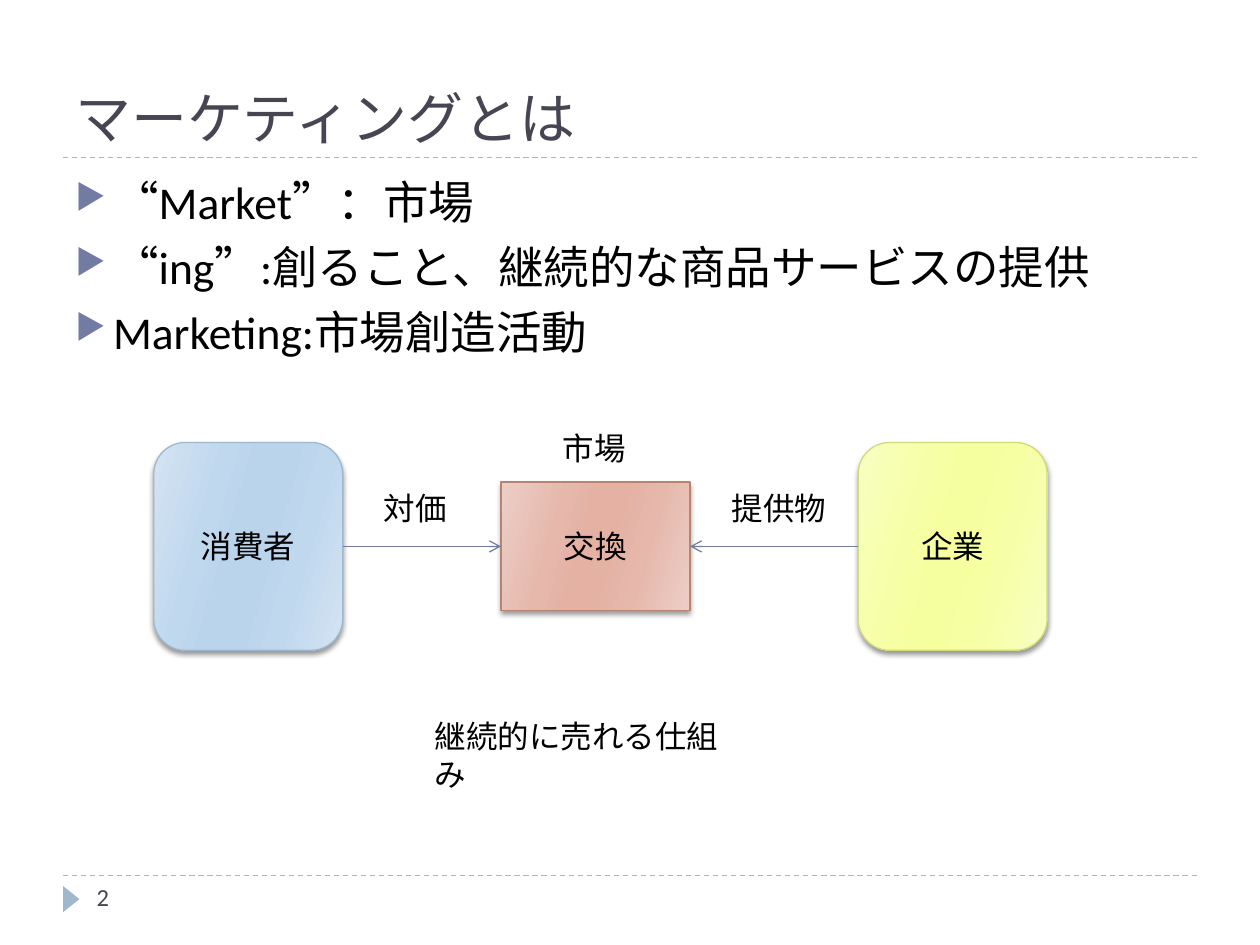
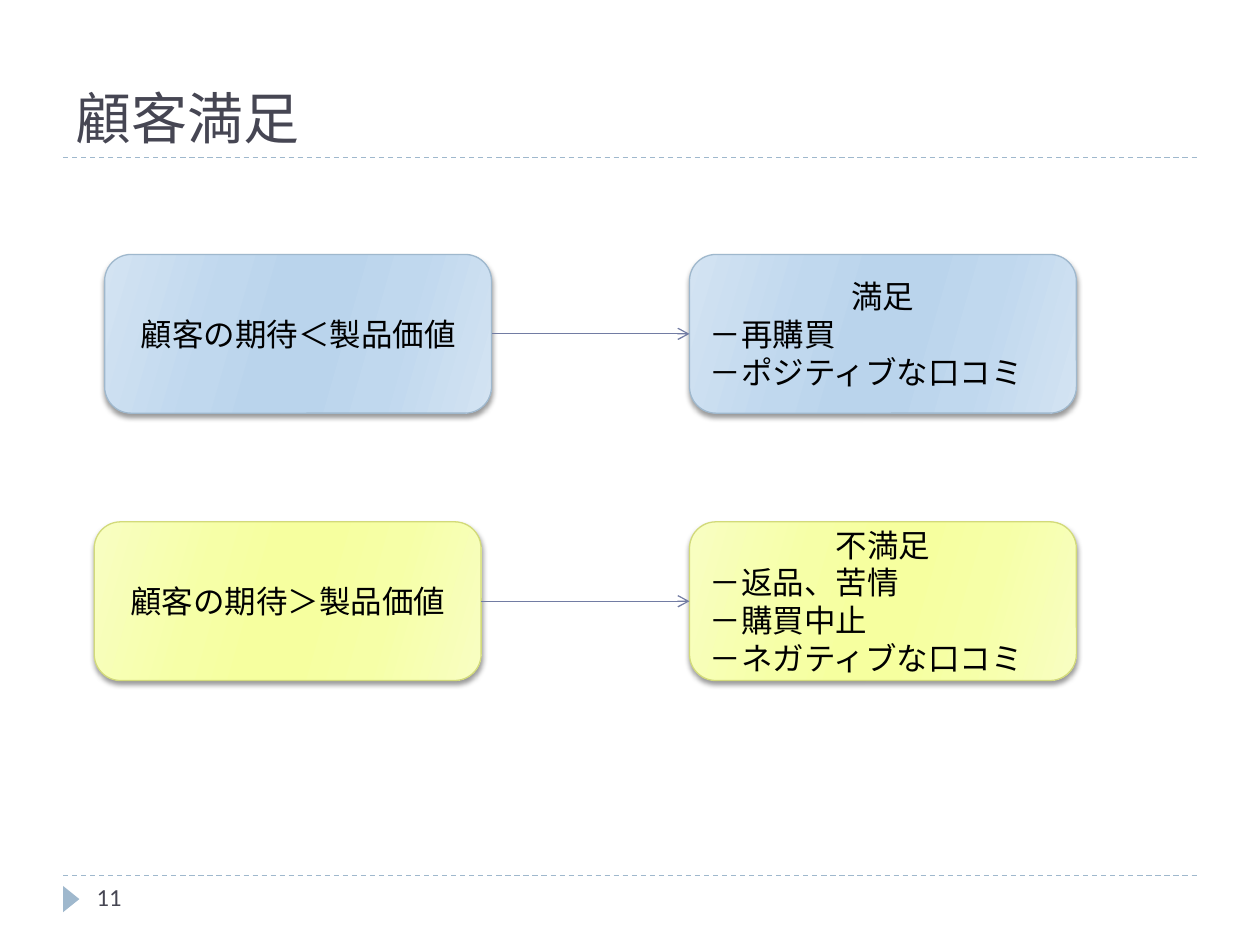
from dataclasses import dataclass

from lxml import etree
from pptx import Presentation
from pptx import util as u
from pptx.dml import color as col
from pptx.enum import dml, shapes, text
from pptx.oxml import ns


@dataclass(frozen=True)
class Theme:
    title_font: str = "Roboto Slab"
    body_font: str = "Calibri"
    title_size: int = 32
    bullet_size: int = 26
    label_size: int = 18
    number_size: int = 14
    heading: str = "464653"
    ink: str = "000000"
    rule: str = "9FB8CD"
    accent: str = "727CA3"
    blue: tuple = ("D3E3F2", "C0D8EE", "BAD4EC", "9FB8CD")
    yellow: tuple = ("F8FEC2", "F6FFA7", "F6FF9F", "D2DA7A")
    red: tuple = ("ECCEC6", "E6B8AC", "E4B1A3", "B88472")


theme = Theme()
rgb = col.RGBColor.from_string
left, center = text.PP_ALIGN.LEFT, text.PP_ALIGN.CENTER


def write(frame, lines, size, ink=theme.ink, font=theme.body_font, first_align=left):
    frame.word_wrap = True
    for i, line in enumerate(lines):
        paragraph = frame.paragraphs[0] if i == 0 else frame.add_paragraph()
        paragraph.alignment = left if i else first_align
        run = paragraph.add_run()
        run.text = line
        run.font.size = u.Pt(size)
        run.font.name = font
        run.font.color.rgb = rgb(ink)


def draw_line(slide, x1, y1, x2, y2, ink):
    line = slide.shapes.add_connector(shapes.MSO_CONNECTOR.STRAIGHT, x1, y1, x2, y2)
    line.line.color.rgb = rgb(ink)
    line.line.width = u.Pt(0.75)
    etree.SubElement(line._element.spPr, ns.qn("a:effectLst"))
    return line


deck = Presentation()
deck.slide_width, deck.slide_height = u.Cm(25.4), u.Cm(19.05)

pages = []
for heading, number in [("マーケティングとは", "2"), ("顧客満足", "11")]:
    page = deck.slides.add_slide(deck.slide_layouts[6])
    pages.append(page)
    for y in (17.65, 3.18):
        rule = draw_line(page, u.Cm(1.27), u.Cm(y), u.Cm(24.13), u.Cm(y), theme.rule)
        rule.line.dash_style = dml.MSO_LINE.DASH
    marker = page.shapes.add_shape(
        shapes.MSO_SHAPE.ISOSCELES_TRIANGLE, u.Cm(1.17), u.Cm(17.96), u.Cm(0.53), u.Cm(0.33))
    marker.rotation = 90
    marker.shadow.inherit = False
    marker.fill.solid()
    marker.fill.fore_color.rgb = rgb(theme.rule)
    marker.line.fill.background()
    title = page.shapes.add_textbox(u.Cm(1.27), u.Cm(0.43), u.Cm(22.86), u.Cm(2.74))
    title.text_frame.vertical_anchor = text.MSO_ANCHOR.BOTTOM
    write(title.text_frame, [heading], theme.title_size, theme.heading, theme.title_font)
    page_number = page.shapes.add_textbox(u.Cm(1.7), u.Cm(17.65), u.Cm(5.5), u.Cm(1.02))
    write(page_number.text_frame, [number], theme.number_size, theme.heading)

marketing, satisfaction = pages

definitions = marketing.shapes.add_textbox(u.Cm(1.27), u.Cm(3.38), u.Cm(22.86), u.Cm(4.14))
write(definitions.text_frame,
      ["“Market”：市場", "“ing”:創ること、継続的な商品サービスの提供", "Marketing:市場創造活動"],
      theme.bullet_size)
for definition in definitions.text_frame.paragraphs:
    definition.space_before = u.Pt(6)
    properties = definition._p.get_or_add_pPr()
    properties.set("marL", str(u.Cm(0.76)))
    properties.set("indent", str(-u.Cm(0.76)))
    bullet_color = etree.SubElement(properties, ns.qn("a:buClr"))
    etree.SubElement(bullet_color, ns.qn("a:srgbClr"), val=theme.accent)
    etree.SubElement(properties, ns.qn("a:buSzPct"), val="76000")
    etree.SubElement(properties, ns.qn("a:buChar"), char="▶")

rounded, square = shapes.MSO_SHAPE.ROUNDED_RECTANGLE, shapes.MSO_SHAPE.RECTANGLE
cards = []
for page, outline, x, y, width, height, palette, lines in [
    (marketing, rounded, 3.1, 8.92, 3.81, 4.19, theme.blue, ["消費者"]),
    (marketing, rounded, 17.3, 8.92, 3.81, 4.19, theme.yellow, ["企業"]),
    (marketing, square, 10.1, 9.72, 3.81, 2.59, theme.red, ["交換"]),
    (satisfaction, rounded, 2.11, 5.13, 7.8, 3.2, theme.blue, ["顧客の期待＜製品価値"]),
    (satisfaction, rounded, 1.9, 10.52, 7.8, 3.2, theme.yellow, ["顧客の期待＞製品価値"]),
    (satisfaction, rounded, 13.9, 5.13, 7.8, 3.2, theme.blue,
     ["満足", "－再購買", "－ポジティブな口コミ"]),
    (satisfaction, rounded, 13.9, 10.52, 7.8, 3.2, theme.yellow,
     ["不満足", "－返品、苦情", "－購買中止", "－ネガティブな口コミ"]),
]:
    card = page.shapes.add_shape(outline, u.Cm(x), u.Cm(y), u.Cm(width), u.Cm(height))
    cards.append(card)
    edge, middle, core, border = palette
    card.fill.gradient()
    card.fill.gradient_angle = 344
    stops = card._element.spPr.find(".//" + ns.qn("a:gsLst"))
    for stop in list(stops):
        stops.remove(stop)
    for percent, shade in zip((0, 30, 45, 55, 73, 100), (edge, middle, core, core, middle, edge)):
        stop = etree.SubElement(stops, ns.qn("a:gs"), pos=str(percent * 1000))
        etree.SubElement(stop, ns.qn("a:srgbClr"), val=shade)
    card.line.color.rgb = rgb(border)
    card.line.width = u.Pt(0.75)
    card.shadow.inherit = False
    shadow = etree.SubElement(
        card._element.spPr.find(ns.qn("a:effectLst")), ns.qn("a:outerShdw"),
        blurRad=str(u.Pt(3)), dist=str(u.Pt(2)), dir="5400000", rotWithShape="0")
    shadow_color = etree.SubElement(shadow, ns.qn("a:srgbClr"), val=theme.ink)
    etree.SubElement(shadow_color, ns.qn("a:alpha"), val="40000")
    card.text_frame.vertical_anchor = text.MSO_ANCHOR.MIDDLE
    write(card.text_frame, lines, theme.label_size, first_align=center)

consumer, company, exchange, below_value, above_value, satisfied, dissatisfied = cards
left_side, right_side = 1, 3
for page, source, target in [
    (marketing, company, exchange),
    (marketing, consumer, exchange),
    (satisfaction, below_value, satisfied),
    (satisfaction, above_value, dissatisfied),
]:
    y = source.top + source.height // 2
    if source.left < target.left:
        x1, x2, sides = source.left + source.width, target.left, (right_side, left_side)
    else:
        x1, x2, sides = source.left, target.left + target.width, (left_side, right_side)
    arrow = draw_line(page, x1, y, x2, y, theme.accent)
    arrow.begin_connect(source, sides[0])
    arrow.end_connect(target, sides[1])
    etree.SubElement(arrow._element.spPr.find(ns.qn("a:ln")), ns.qn("a:tailEnd"), type="arrow")

for x, y, width, caption in [
    (14.5, 9.73, 2.44, "提供物"),
    (7.49, 9.73, 1.82, "対価"),
    (11.1, 8.53, 1.82, "市場"),
    (8.51, 14.33, 6.81, "継続的に売れる仕組み"),
]:
    label = marketing.shapes.add_textbox(u.Cm(x), u.Cm(y), u.Cm(width), u.Cm(1.02))
    write(label.text_frame, [caption], theme.label_size)

deck.save("out.pptx")
